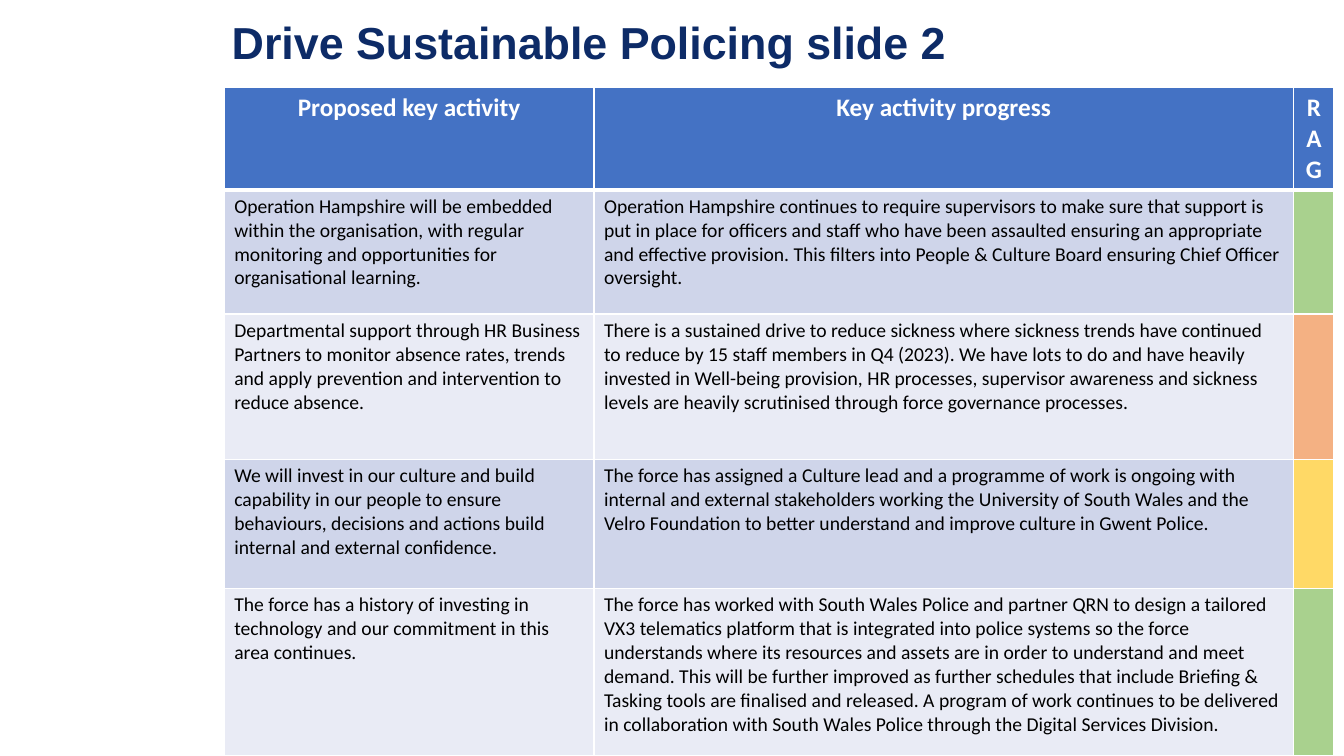
from dataclasses import dataclass

from lxml.etree import SubElement
from pptx import Presentation
from pptx.dml.color import RGBColor
from pptx.enum.text import MSO_ANCHOR, PP_ALIGN
from pptx.oxml.ns import qn
from pptx.util import Cm, Pt


@dataclass(frozen=True)
class Theme:
    title_font: str = "Arial"
    table_font: str = "Calibri"
    title_size: int = 32
    header_size: int = 18
    body_size: int = 14
    navy: str = "0D2B67"
    header: str = "4472C4"
    bands: tuple[str, str] = ("CFD5EA", "E9EBF5")
    white: str = "FFFFFF"
    black: str = "000000"
    green: str = "A9D18E"
    orange: str = "F4B183"
    yellow: str = "FFD966"
    rule: int = 1
    header_rule: int = 3


@dataclass(frozen=True)
class Activity:
    proposal: str
    progress: str
    rag: str
    height: float


THEME = Theme()
TITLE = "Drive Sustainable Policing slide 2"
HEADINGS = ("Proposed key activity", "Key activity progress", "RAG")
COLUMN_WIDTHS = (9.32, 17.63, 1.02)
HEADER_HEIGHT = 2.57
ACTIVITIES = (
    Activity(
        "Operation Hampshire will be embedded within the organisation, with regular "
        "monitoring and opportunities for organisational learning.",
        "Operation Hampshire continues to require supervisors to make sure that support "
        "is put in place for officers and staff who have been assaulted ensuring an "
        "appropriate and effective provision. This filters into People & Culture Board "
        "ensuring Chief Officer oversight.",
        THEME.green, 3.13),
    Activity(
        "Departmental support through HR Business Partners to monitor absence rates, "
        "trends and apply prevention and intervention to reduce absence.",
        "There is a sustained drive to reduce sickness where sickness trends have "
        "continued to reduce by 15 staff members in Q4 (2023). We have lots to do and "
        "have heavily invested in Well-being provision, HR processes, supervisor "
        "awareness and sickness levels are heavily scrutinised through force governance "
        "processes.",
        THEME.orange, 3.66),
    Activity(
        "We will invest in our culture and build capability in our people to ensure "
        "behaviours, decisions and actions build internal and external confidence.",
        "The force has assigned a Culture lead and a programme of work is ongoing with "
        "internal and external stakeholders working the University of South Wales and "
        "the Velro Foundation to better understand and improve culture in Gwent Police.",
        THEME.yellow, 3.25),
    Activity(
        "The force has a history of investing in technology and our commitment in this "
        "area continues.",
        "The force has worked with South Wales Police and partner QRN to design a "
        "tailored VX3 telematics platform that is integrated into police systems so the "
        "force understands where its resources and assets are in order to understand "
        "and meet demand. This will be further improved as further schedules that "
        "include Briefing & Tasking tools are finalised and released. A program of work "
        "continues to be delivered in collaboration with South Wales Police through the "
        "Digital Services Division.",
        THEME.green, 4.22),
)


def style_text(p, font: str, size: int, color: str, bold: bool) -> None:
    for r in p.runs:
        r.font.name = font
        r.font.size = Pt(size)
        r.font.bold = bold
        r.font.color.rgb = RGBColor.from_string(color)


def set_borders(cell, top: int, bottom: int) -> None:
    """Rule all four sides in white; must run before the cell is filled."""
    tc_pr = cell._tc.get_or_add_tcPr()
    widths = {"lnL": THEME.rule, "lnR": THEME.rule, "lnT": top, "lnB": bottom}
    for side, width in widths.items():
        ln = SubElement(tc_pr, qn(f"a:{side}"), w=str(Pt(width)))
        fill = SubElement(ln, qn("a:solidFill"))
        SubElement(fill, qn("a:srgbClr"), val=THEME.white)


def fill_cell(cell, text: str, fill: str, row: int) -> None:
    header = row == 0
    set_borders(cell,
                top=THEME.header_rule if row == 1 else THEME.rule,
                bottom=THEME.header_rule if header else THEME.rule)
    cell.fill.solid()
    cell.fill.fore_color.rgb = RGBColor.from_string(fill)
    if not text:
        return
    cell.text_frame.text = text
    p = cell.text_frame.paragraphs[0]
    if header:
        p.alignment = PP_ALIGN.CENTER
        style_text(p, THEME.table_font, THEME.header_size, THEME.white, True)
    else:
        style_text(p, THEME.table_font, THEME.body_size, THEME.black, False)


def add_title(slide) -> None:
    sp = slide.shapes.add_textbox(Cm(5.59), Cm(0.33), Cm(28.02), Cm(1.63))
    tf = sp.text_frame
    tf.word_wrap = True
    tf.vertical_anchor = MSO_ANCHOR.MIDDLE
    tf.text = TITLE
    p = tf.paragraphs[0]
    p.line_spacing = 0.9
    style_text(p, THEME.title_font, THEME.title_size, THEME.navy, True)


def add_activity_table(slide) -> None:
    heights = [HEADER_HEIGHT] + [a.height for a in ACTIVITIES]
    table = slide.shapes.add_table(
        len(heights), len(HEADINGS), Cm(5.65), Cm(2.21),
        Cm(sum(COLUMN_WIDTHS)), Cm(sum(heights))).table
    for column, width in zip(table.columns, COLUMN_WIDTHS):
        column.width = Cm(width)
    for row, height in zip(table.rows, heights):
        row.height = Cm(height)

    for col, heading in enumerate(HEADINGS):
        fill_cell(table.cell(0, col), heading, THEME.header, 0)
    for row, activity in enumerate(ACTIVITIES, start=1):
        band = THEME.bands[(row - 1) % 2]
        fill_cell(table.cell(row, 0), activity.proposal, band, row)
        fill_cell(table.cell(row, 1), activity.progress, band, row)
        fill_cell(table.cell(row, 2), "", activity.rag, row)


def main() -> None:
    prs = Presentation()
    prs.slide_width, prs.slide_height = Cm(33.87), Cm(19.05)
    slide = prs.slides.add_slide(prs.slide_layouts[6])
    add_title(slide)
    add_activity_table(slide)
    prs.save("out.pptx")


if __name__ == "__main__":
    main()
